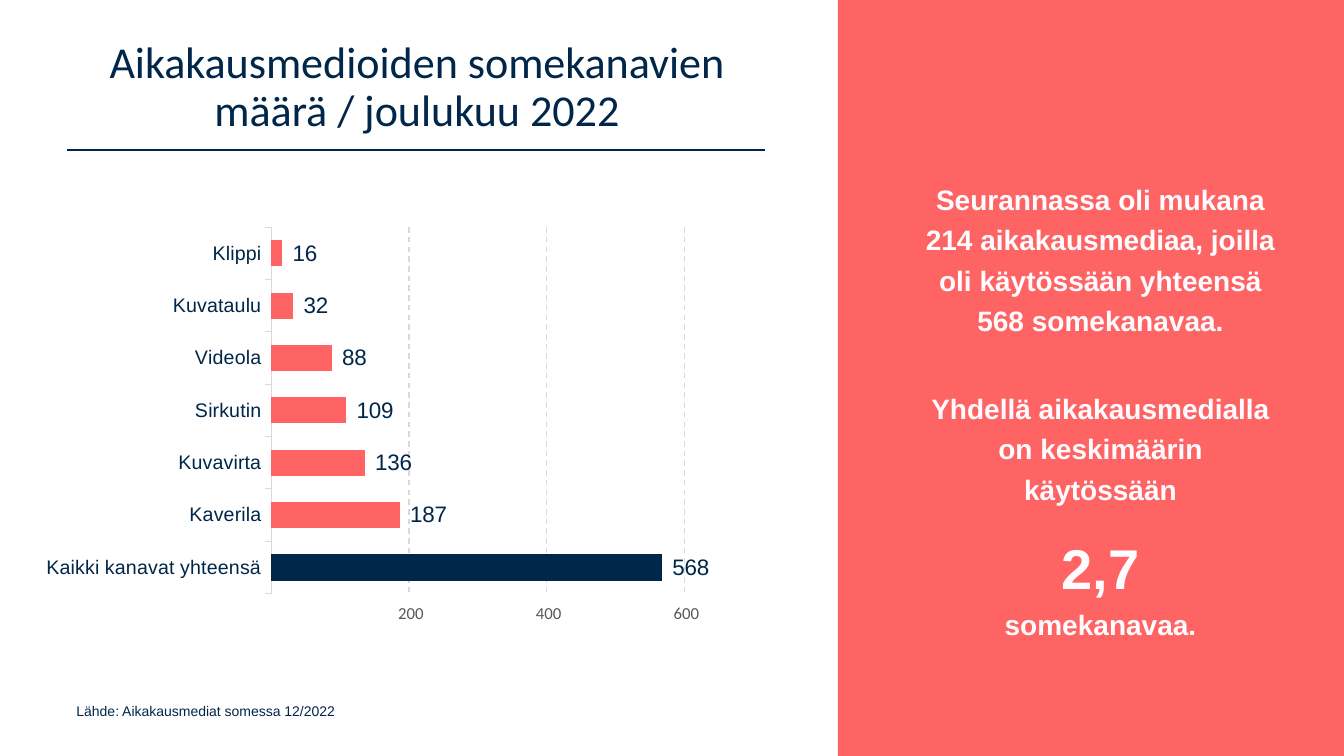
"""Build a slide on the number of social media channels of magazine media."""
from lxml import etree
from pptx import Presentation
from pptx.chart.data import CategoryChartData
from pptx.dml.color import RGBColor
from pptx.enum.chart import XL_CHART_TYPE, XL_LABEL_POSITION, XL_TICK_MARK
from pptx.enum.dml import MSO_LINE
from pptx.enum.shapes import MSO_CONNECTOR, MSO_SHAPE
from pptx.enum.text import MSO_ANCHOR, PP_ALIGN
from pptx.oxml import parse_xml
from pptx.oxml.ns import nsdecls, qn
from pptx.util import Inches, Pt

CORAL = RGBColor(0xFF, 0x64, 0x64)
NAVY = RGBColor(0x00, 0x26, 0x49)
PALE = RGBColor(0xFE, 0xFC, 0xFF)
BLACK = RGBColor(0x00, 0x00, 0x00)
GREY = RGBColor(0x59, 0x59, 0x59)
LIGHT_GREY = RGBColor(0xD9, 0xD9, 0xD9)

BAR = XL_CHART_TYPE.BAR_CLUSTERED
OUTSIDE_END = XL_LABEL_POSITION.OUTSIDE_END
TICK_OUT = XL_TICK_MARK.OUTSIDE
DASH = MSO_LINE.DASH
STRAIGHT = MSO_CONNECTOR.STRAIGHT
RECTANGLE = MSO_SHAPE.RECTANGLE
MIDDLE = MSO_ANCHOR.MIDDLE
CENTER = PP_ALIGN.CENTER

TITLE_ONLY = 5
NUMBER_FORMAT = r"#\ ##0;\-#\ ##0;;@"
CHANNELS = [
    ("Kaikki kanavat yhteensä", 568),
    ("Kaverila", 187),
    ("Kuvavirta", 136),
    ("Sirkutin", 109),
    ("Videola", 88),
    ("Kuvataulu", 32),
    ("Klippi", 16),
]


def set_font(font, size, color, name="Arial", bold=False):
    """Set the typeface, size, colour and weight of a font."""
    font.name = name
    font.size = Pt(size)
    font.bold = bold
    font.color.rgb = color


def write(p, text, size=20, color=NAVY, name="Arial", bold=False,
          align=None, line_spacing=None, before=0):
    """Write formatted text into a paragraph."""
    p.alignment = align
    p.line_spacing = line_spacing
    p.space_before = Pt(before)
    r = p.add_run()
    r.text = text
    set_font(r.font, size, color, name, bold)


def place(shape, left, top, width, height):
    """Move and size a shape, in inches."""
    shape.left, shape.top = Inches(left), Inches(top)
    shape.width, shape.height = Inches(width), Inches(height)


def add_text_frame(s, left, top, width, height):
    """Add a wrapping text box and return its text frame."""
    box = s.shapes.add_textbox(Inches(left), Inches(top), Inches(width), Inches(height))
    box.text_frame.word_wrap = True
    return box.text_frame


def add_panel(s):
    """Add the coloured panel on the right."""
    sp = s.shapes.add_shape(RECTANGLE, Inches(8.31), 0, Inches(5.02), Inches(7.5))
    sp.shadow.inherit = False
    sp.fill.solid()
    sp.fill.fore_color.rgb = CORAL
    sp.line.fill.background()


def add_rule(s):
    """Add the line under the title."""
    rule = s.shapes.add_connector(STRAIGHT, Inches(0.66), Inches(1.49), Inches(7.59), Inches(1.49))
    rule.line.color.rgb = NAVY
    rule.line.width = Pt(1)
    etree.SubElement(rule._element.spPr, qn("a:effectLst"))


def set_title(s, text):
    """Move and fill the title placeholder."""
    title = s.shapes.title
    place(title, 0.66, 0.25, 6.95, 1.25)
    title.text_frame.word_wrap = True
    title.text_frame.vertical_anchor = MIDDLE
    write(title.text_frame.paragraphs[0], text, size=31.5, name="Calibri",
          align=CENTER, line_spacing=0.9)


def add_message(s):
    """Add the key message on the panel."""
    tf = add_text_frame(s, 9.04, 1.5, 3.75, 5.1)
    tf.vertical_anchor = MIDDLE
    lines = [
        ("Seurannassa oli mukana 214 aikakausmediaa, joilla oli käytössään "
         "yhteensä 568 somekanavaa.", 20, 0),
        ("Yhdellä aikakausmedialla on keskimäärin käytössään", 20, 34),
        ("2,7", 40, 10),
        ("somekanavaa.", 20, 0),
    ]
    for i, (text, size, before) in enumerate(lines):
        p = tf.add_paragraph() if i else tf.paragraphs[0]
        write(p, text, size=size, color=PALE, bold=True, align=CENTER,
              line_spacing=1.2, before=before)


def set_plot_area(chart, x, y, w, h):
    """Fix the inner plot area, in fractions of the chart."""
    plot_area = chart._chartSpace.chart.plotArea
    for old in plot_area.findall(qn("c:layout")):
        plot_area.remove(old)
    sizes = "".join(f'<c:{tag} val="{val}"/>' for tag, val in zip("xywh", (x, y, w, h)))
    plot_area.insert(0, parse_xml(
        f'<c:layout {nsdecls("c")}><c:manualLayout><c:layoutTarget val="inner"/>'
        f'<c:xMode val="edge"/><c:yMode val="edge"/>{sizes}</c:manualLayout></c:layout>'))


def format_axes(chart):
    """Format the channel axis and the value axis."""
    cat_axis, val_axis = chart.category_axis, chart.value_axis
    cat_axis.major_tick_mark = val_axis.major_tick_mark = TICK_OUT
    set_font(cat_axis.tick_labels.font, 14, NAVY)
    cat_axis.format.line.color.rgb = LIGHT_GREY
    cat_axis.format.line.width = Pt(0.75)
    set_font(val_axis.tick_labels.font, 12, GREY, "Calibri")
    val_axis.tick_labels.number_format = NUMBER_FORMAT
    val_axis.tick_labels.number_format_is_linked = False
    val_axis.minimum_scale, val_axis.maximum_scale = 0, 600
    val_axis.major_unit = 200
    val_axis.format.line.fill.background()
    grid = val_axis.major_gridlines.format.line
    grid.color.rgb = LIGHT_GREY
    grid.width = Pt(1)
    grid.dash_style = DASH


def add_channel_chart(s):
    """Add the bar chart of channels."""
    data = CategoryChartData()
    data.categories = [name for name, _ in CHANNELS]
    data.add_series("Series 1", [count for _, count in CHANNELS])
    chart = s.shapes.add_chart(BAR, 0, Inches(1.88), Inches(8.31), Inches(4.34), data).chart
    chart.has_legend = chart.has_title = False
    set_font(chart.font, 10, BLACK, "Calibri")
    set_plot_area(chart, 0.324, 0.086, 0.493, 0.838)
    format_axes(chart)

    plot = chart.plots[0]
    plot.gap_width = 100
    plot.vary_by_categories = False
    series = plot.series[0]
    series.invert_if_negative = False
    for fmt, color in ((series.format, CORAL), (series.points[0].format, NAVY)):
        fmt.fill.solid()
        fmt.fill.fore_color.rgb = color
    labels = series.data_labels
    labels.show_value = True
    labels.position = OUTSIDE_END
    labels.number_format = NUMBER_FORMAT
    labels.number_format_is_linked = False
    set_font(labels.font, 16, NAVY)


def main():
    """Build and save the slide."""
    prs = Presentation()
    prs.slide_width, prs.slide_height = Inches(13.33), Inches(7.5)
    s = prs.slides.add_slide(prs.slide_layouts[TITLE_ONLY])
    add_panel(s)
    add_rule(s)
    set_title(s, "Aikakausmedioiden somekanavien määrä / joulukuu 2022")
    source = add_text_frame(s, 0.66, 6.92, 6.58, 0.44)
    write(source.paragraphs[0], "Lähde: Aikakausmediat somessa 12/2022", size=10)
    add_message(s)
    add_channel_chart(s)
    prs.save("out.pptx")


if __name__ == "__main__":
    main()
